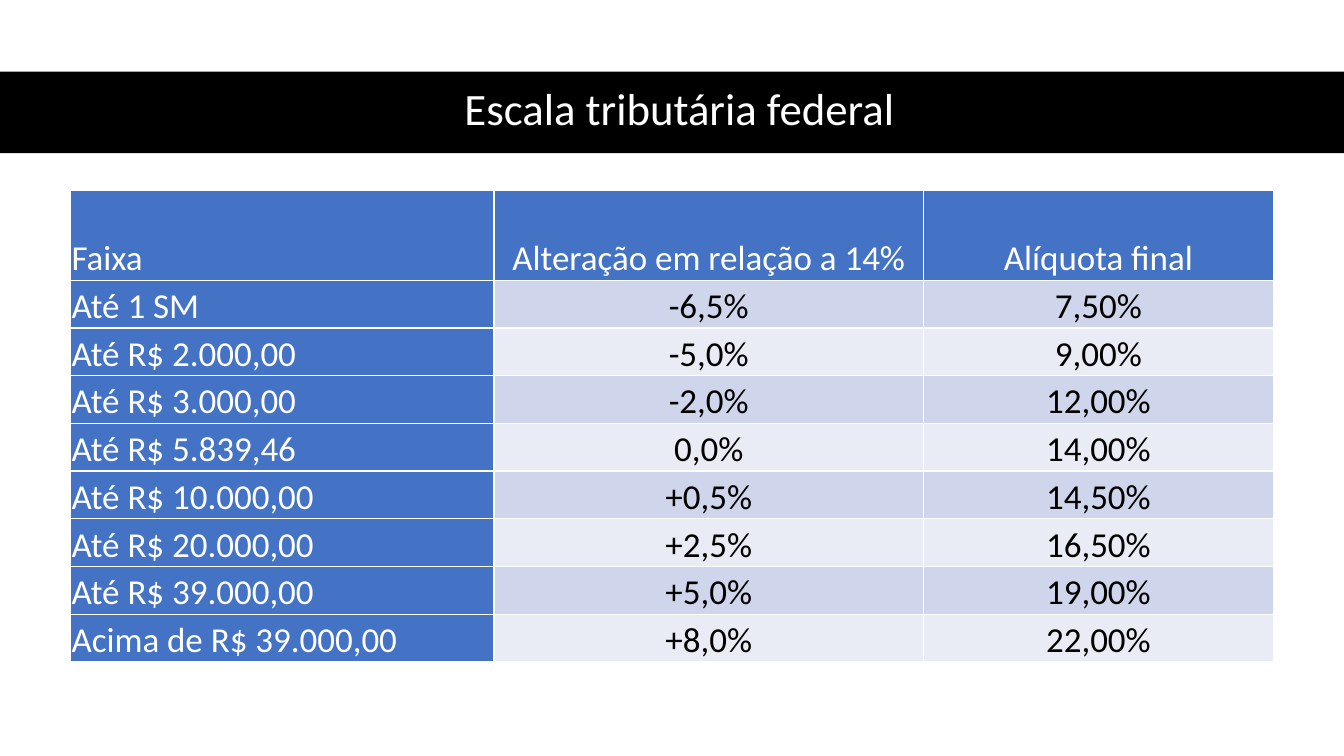
from dataclasses import dataclass

from lxml import etree
from pptx import Presentation
from pptx.dml.color import RGBColor
from pptx.enum.shapes import MSO_SHAPE
from pptx.enum.text import MSO_ANCHOR, PP_ALIGN
from pptx.oxml.ns import qn
from pptx.slide import Slide
from pptx.table import _Cell
from pptx.text.text import TextFrame
from pptx.util import Inches, Pt

RECT = MSO_SHAPE.RECTANGLE
LEFT, CENTER = PP_ALIGN.LEFT, PP_ALIGN.CENTER
MIDDLE, BOTTOM = MSO_ANCHOR.MIDDLE, MSO_ANCHOR.BOTTOM

BLACK = RGBColor(0x00, 0x00, 0x00)
WHITE = RGBColor(0xFF, 0xFF, 0xFF)
BLUE = RGBColor(0x44, 0x72, 0xC4)
BANDS = (RGBColor(0xCF, 0xD5, 0xEA), RGBColor(0xE9, 0xEB, 0xF5))

FONT = "Calibri"
WIDE, HIGH = Inches(13.33), Inches(7.5)

# Percent of the slide's width (columns) and height (rows)
COLS = (31.5, 31.96, 26.03)
HEAD, ROW = 11.87, 6.31


@dataclass(frozen=True)
class Box:
    """Place in percent of the slide's width and height."""
    left: float
    top: float
    width: float
    height: float

    def place(self) -> tuple[int, int, int, int]:
        return (across(self.left), down(self.top),
                across(self.width), down(self.height))


@dataclass(frozen=True)
class Rate:
    bracket: str
    change: str
    final: str

    def texts(self) -> tuple[str, str, str]:
        return self.bracket, self.change, self.final


RATES = (
    Rate("Faixa", "Alteração em relação a 14%", "Alíquota final"),
    Rate("Até 1 SM", "-6,5%", "7,50%"),
    Rate("Até R$ 2.000,00", "-5,0%", "9,00%"),
    Rate("Até R$ 3.000,00", "-2,0%", "12,00%"),
    Rate("Até R$ 5.839,46", "0,0%", "14,00%"),
    Rate("Até R$ 10.000,00", "+0,5%", "14,50%"),
    Rate("Até R$ 20.000,00", "+2,5%", "16,50%"),
    Rate("Até R$ 39.000,00", "+5,0%", "19,00%"),
    Rate("Acima de R$ 39.000,00", "+8,0%", "22,00%"),
)

BAND = Box(0, 9.47, 100, 10.8)
TITLE = Box(4.58, 9.33, 91.97, 10.8)
GRID = Box(5.25, 25.2, sum(COLS), HEAD + ROW * (len(RATES) - 1))


def across(share: float) -> int:
    return round(WIDE * share / 100)


def down(share: float) -> int:
    return round(HIGH * share / 100)


def write(frame: TextFrame, text: str, size: int, color: RGBColor,
          align: PP_ALIGN) -> None:
    line = frame.paragraphs[0]
    line.alignment = align
    run = line.add_run()
    run.text = text
    font = run.font
    font.name, font.size, font.bold = FONT, Pt(size), False
    font.color.rgb = color


def edge(cell: _Cell) -> None:
    """Give all four sides of the cell a thin white line."""
    props = cell._tc.get_or_add_tcPr()
    for spot, side in enumerate(("a:lnL", "a:lnR", "a:lnT", "a:lnB")):
        line = etree.Element(qn(side), w=str(Pt(1)))
        fill = etree.SubElement(line, qn("a:solidFill"))
        etree.SubElement(fill, qn("a:srgbClr"), val=str(WHITE))
        props.insert(spot, line)


def add_title(slide: Slide) -> None:
    band = slide.shapes.add_shape(RECT, *BAND.place())
    band.shadow.inherit = False
    band.fill.solid()
    band.fill.fore_color.rgb = BLACK
    band.line.fill.background()

    frame = slide.shapes.add_textbox(*TITLE.place()).text_frame
    frame.word_wrap = True
    frame.vertical_anchor = MIDDLE
    write(frame, "Escala tributária federal", 32, WHITE, CENTER)
    frame.paragraphs[0].line_spacing = 0.9


def fill_cell(cell: _Cell, text: str, row: int, col: int) -> None:
    label = row == 0 or col == 0
    cell.fill.solid()
    cell.fill.fore_color.rgb = BLUE if label else BANDS[(row - 1) % 2]
    cell.margin_left = cell.margin_right = cell.margin_top = Inches(0.01)
    cell.margin_bottom = 0
    cell.vertical_anchor = BOTTOM
    write(cell.text_frame, text, 25, WHITE if label else BLACK,
          CENTER if col else LEFT)
    edge(cell)


def add_rates(slide: Slide) -> None:
    table = slide.shapes.add_table(len(RATES), len(COLS), *GRID.place()).table
    table.first_col = True
    for col, share in enumerate(COLS):
        table.columns[col].width = across(share)
    for row, rate in enumerate(RATES):
        table.rows[row].height = down(ROW if row else HEAD)
        for col, text in enumerate(rate.texts()):
            fill_cell(table.cell(row, col), text, row, col)


def main() -> None:
    deck = Presentation()
    deck.slide_width, deck.slide_height = WIDE, HIGH
    slide = deck.slides.add_slide(deck.slide_layouts[6])
    add_title(slide)
    add_rates(slide)
    deck.save("out.pptx")


if __name__ == "__main__":
    main()
